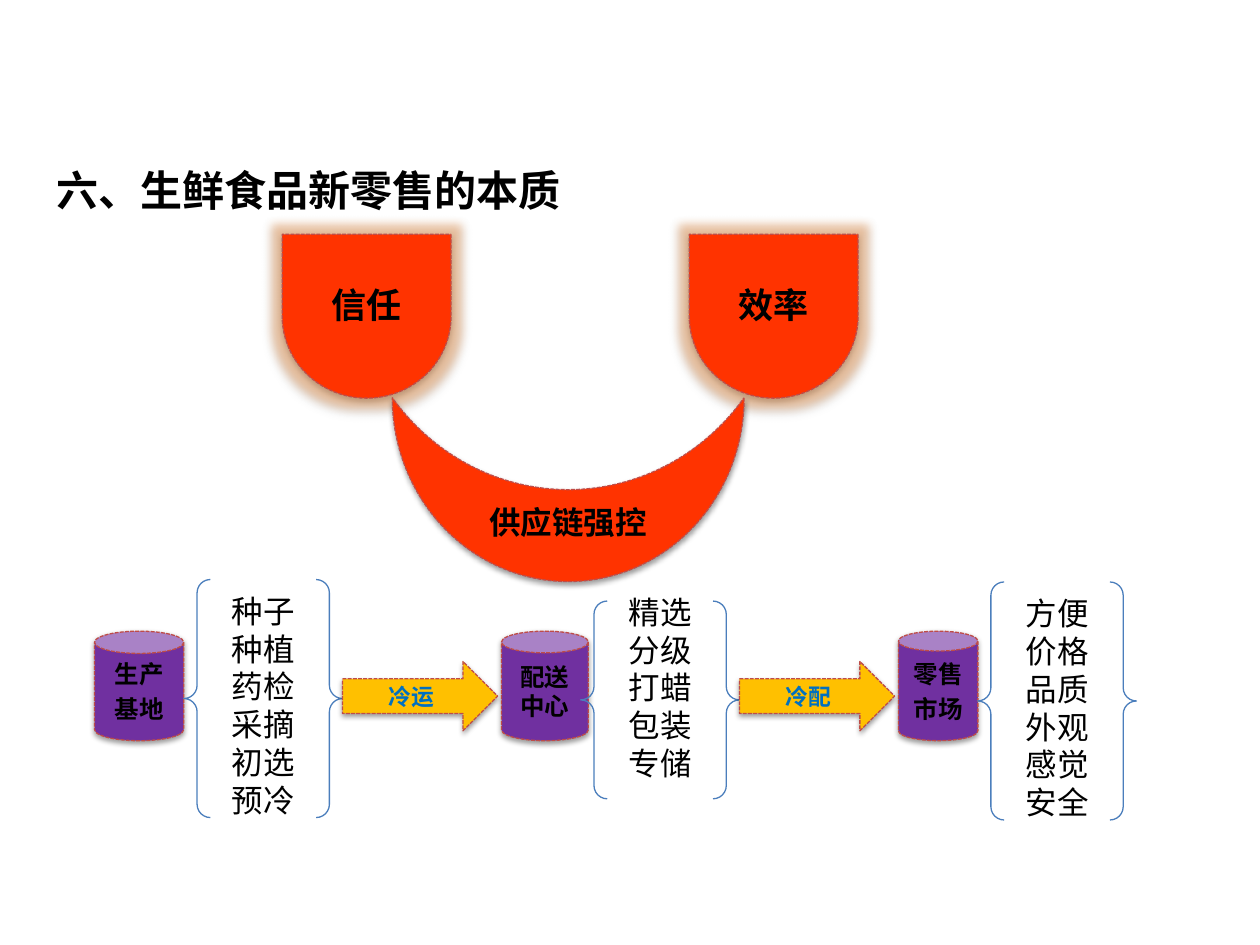
from lxml import etree
from pptx import Presentation
from pptx.dml.color import RGBColor
from pptx.enum import dml, lang, shapes, text
from pptx.oxml.ns import qn
from pptx.util import Pt

COLORS = {"red": "FF3300", "purple": "7030A0", "gold": "FFC000", "dash": "BF4C48",
          "brace": "4B7EBC", "ink": "000000", "blue": "0070C0", "glow": "F79646"}
HEADING_FONT, LIST_FONT = "Noto Sans CJK SC", "Calibri"
SHAPE = shapes.MSO_SHAPE
LIST_LINE = 22

# can left, can width, can label, brace top, brace height, list items
STAGES = [
    (54, 51, ["生产", "基地"], 331.2, 136, ["种子", "种植", "药检", "采摘", "初选", "预冷"]),
    (286.6, 49.6, ["配送中心"], 343.5, 113, ["精选", "分级", "打蜡", "包装", "专储"]),
    (513.4, 45.4, ["零售", "市场"], 332.6, 136, ["方便", "价格", "品质", "外观", "感觉", "安全"]),
]
BRACE_LEFTS = [105.1, 331.9, 558.7]
BRACE_WIDTH = 90.7


def color(name):
    return RGBColor.from_string(COLORS[name])


def write(part, lines, size, ink="ink", font=HEADING_FONT, bold=True,
          align=text.PP_ALIGN.CENTER, gap=0):
    frame = part.text_frame
    frame.word_wrap = True
    frame.vertical_anchor = text.MSO_ANCHOR.MIDDLE
    for i, line in enumerate(lines):
        paragraph = frame.add_paragraph() if i else frame.paragraphs[0]
        paragraph.alignment = align
        if i:
            paragraph.space_before = Pt(gap)
        run = paragraph.add_run()
        run.text = line
        run.font.name = font
        run.font.size = Pt(size)
        run.font.bold = bold
        run.font.language_id = lang.MSO_LANGUAGE_ID.SIMPLIFIED_CHINESE
        run.font.color.rgb = color(ink)


def add_effect(effects, tag, name, alpha, **attributes):
    effect = etree.SubElement(effects, qn(tag), **attributes)
    tint = etree.SubElement(effect, qn("a:srgbClr"), val=COLORS[name])
    etree.SubElement(tint, qn("a:alpha"), val=str(alpha * 1000))


def add_block(slide, kind, box, fill, lines, size, ink="ink", rotation=0,
              direction=None, glow=False):
    """Filled shape with a dashed outline, a soft shadow and a bold label."""
    block = slide.shapes.add_shape(kind, *map(Pt, box))
    block.rotation = rotation
    block.fill.solid()
    block.fill.fore_color.rgb = color(fill)
    block.line.color.rgb = color("dash")
    block.line.width = Pt(0.75)
    block.line.dash_style = dml.MSO_LINE.SQUARE_DOT
    block.shadow.inherit = False
    effects = block._element.spPr.find(qn("a:effectLst"))
    if glow:
        add_effect(effects, "a:glow", "glow", 40, rad=str(Pt(11)))
    add_effect(effects, "a:outerShdw", "ink", 38, blurRad=str(Pt(3.1)),
               dist=str(Pt(1.6)), dir="5400000", rotWithShape="0")
    write(block, lines, size, ink, gap=3)
    if direction:
        block.text_frame._txBody.bodyPr.set("vert", direction)


def add_brace_list(slide, box, items, spare_lines):
    """Brace pair around a list; spare_lines lifts a shorter list."""
    brace = slide.shapes.add_shape(SHAPE.DOUBLE_BRACE, *map(Pt, box))
    brace.fill.background()
    brace.line.color.rgb = color("brace")
    brace.line.width = Pt(0.75)
    brace.shadow.inherit = False
    write(brace, items, 18, font=LIST_FONT, bold=False)
    brace.text_frame.margin_bottom = Pt(3.6 + spare_lines * LIST_LINE)


def add_title(slide, title):
    box = slide.shapes.add_textbox(Pt(25.2), Pt(88.6), Pt(442), Pt(39.6))
    write(box, [title], 24, align=text.PP_ALIGN.LEFT)


def main():
    deck = Presentation()
    deck.slide_width, deck.slide_height = Pt(720), Pt(540)
    slide = deck.slides.add_slide(deck.slide_layouts[6])

    for left, goal in ((162.7, "信任"), (395.3, "效率")):
        add_block(slide, SHAPE.FLOWCHART_DELAY, (left, 132.5, 93.6, 96.5), "red",
                  [goal], 20, rotation=90, direction="vert270", glow=True)
    add_block(slide, SHAPE.MOON, (272.2, 179.3, 105, 201), "red",
              ["供应链强控"], 18, rotation=270, direction="vert")

    longest = max(len(stage[-1]) for stage in STAGES)
    for brace_left, stage in zip(BRACE_LEFTS, STAGES):
        can_left, can_width, label, top, height, items = stage
        add_block(slide, SHAPE.CAN, (can_left, 360.7, can_width, 62.6), "purple", label, 14)
        add_brace_list(slide, (brace_left, top, BRACE_WIDTH, height), items,
                       longest - len(items))
    for brace_left, move in zip(BRACE_LEFTS, ("冷运", "冷配")):
        add_block(slide, SHAPE.RIGHT_ARROW, (brace_left + BRACE_WIDTH, 378, 88.6, 39.6),
                  "gold", [move], 13, ink="blue")

    add_title(slide, "六、生鲜食品新零售的本质")
    deck.save("out.pptx")


if __name__ == "__main__":
    main()
